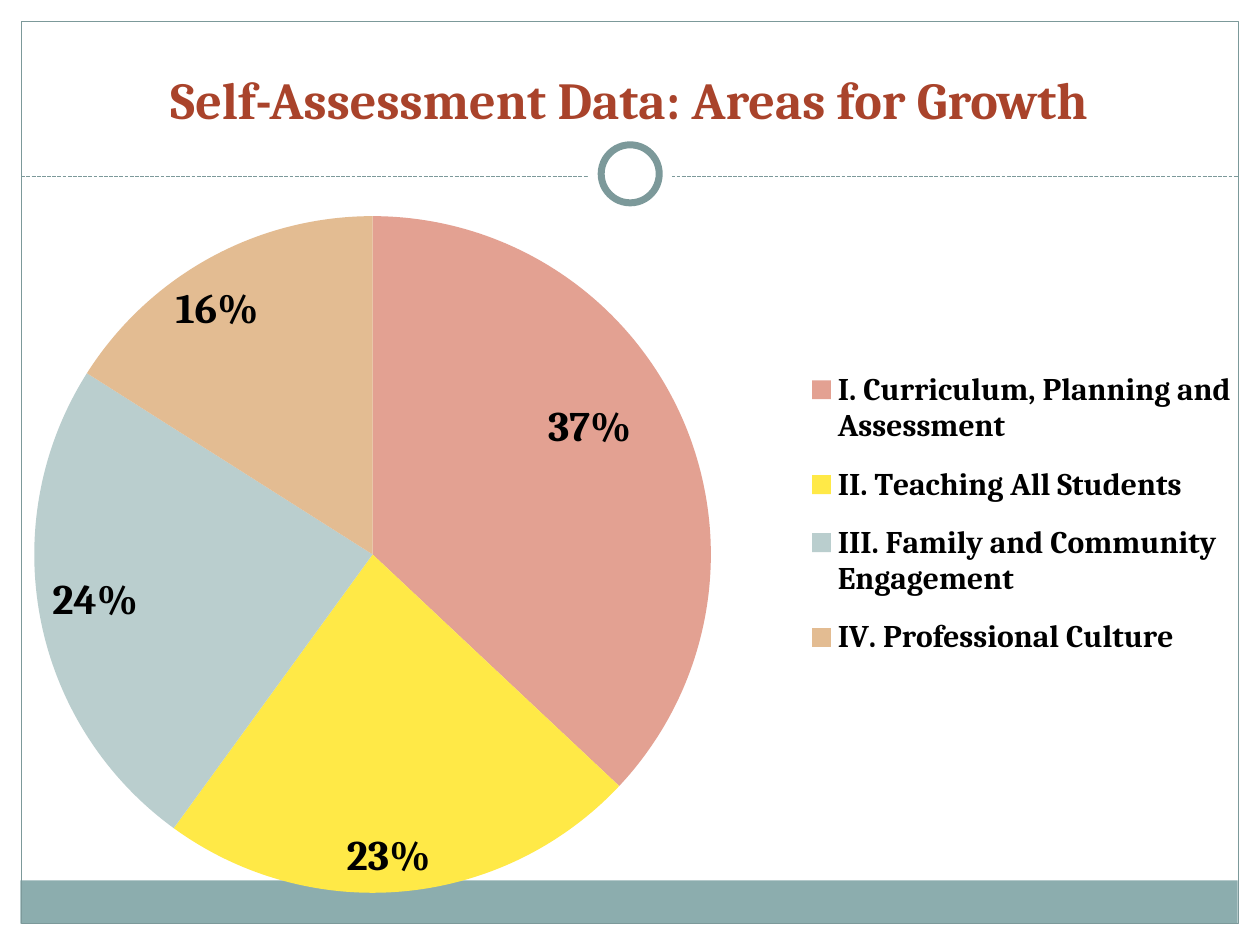
"""Build a slide with a pie chart of self-assessed areas for growth."""
import dataclasses

import pptx
import pptx.chart.data
import pptx.dml.color
import pptx.enum.chart
import pptx.enum.dml
import pptx.enum.shapes
import pptx.enum.text
import pptx.oxml
import pptx.oxml.ns
import pptx.util

Cm = pptx.util.Cm
Pt = pptx.util.Pt
SHAPES = pptx.enum.shapes.MSO_SHAPE
NAMESPACES = pptx.oxml.ns.nsdecls("a", "c")


@dataclasses.dataclass(frozen=True)
class Theme:
    font: str = "Cambria"
    title: str = "A9432B"
    text: str = "000000"
    paper: str = "FFFFFF"
    band: str = "8CADAE"
    line: str = "7C999A"
    title_size: float = 29.7
    legend_size: float = 18
    label_size: float = 24
    chart_size: float = 10


THEME = Theme()

# Each area: name, percentage, colour, label shift from the middle of its slice
AREAS = [
    ("I. Curriculum, Planning and Assessment", 37, "E3A192", (0.05, -0.08)),
    ("II. Teaching All Students", 23, "FFE947", (0, 0.18)),
    ("III. Family and Community Engagement", 24, "BACECE", (-0.09, 0.02)),
    ("IV. Professional Culture", 16, "E3BC92", (-0.06, -0.13)),
]


def rgb(value):
    return pptx.dml.color.RGBColor.from_string(value)


def style_font(font, size, color, bold=True):
    font.name = THEME.font
    font.size = Pt(size)
    font.bold = bold
    font.color.rgb = rgb(color)


def add_shape(page, kind, left, top, width, height, fill=None, line=None, weight=0.75):
    box = page.shapes.add_shape(kind, Cm(left), Cm(top), Cm(width), Cm(height))
    box.shadow.inherit = False
    if fill:
        box.fill.solid()
        box.fill.fore_color.rgb = rgb(fill)
    else:
        box.fill.background()
    if line:
        box.line.color.rgb = rgb(line)
        box.line.width = Pt(weight)
    else:
        box.line.fill.background()


def add_divider(page, left, right, top):
    divider = page.shapes.add_connector(
        pptx.enum.shapes.MSO_CONNECTOR.STRAIGHT, Cm(left), Cm(top), Cm(right), Cm(top))
    divider.line.color.rgb = rgb(THEME.line)
    divider.line.width = Pt(0.75)
    divider.line.dash_style = pptx.enum.dml.MSO_LINE.SQUARE_DOT
    divider._element.spPr.append(pptx.oxml.parse_xml(f"<a:effectLst {NAMESPACES}/>"))


def add_frame(page):
    add_shape(page, SHAPES.RECTANGLE, 0.41, 17.75, 24.54, 0.87, fill=THEME.band)
    add_shape(page, SHAPES.RECTANGLE, 0.43, 0.43, 24.54, 18.19, line=THEME.line)
    add_divider(page, 0.43, 24.97, 3.56)
    add_shape(page, SHAPES.OVAL, 11.85, 2.65, 1.7, 1.7, fill=THEME.paper)
    add_shape(page, SHAPES.OVAL, 12.12, 2.92, 1.17, 1.17,
              fill=THEME.paper, line=THEME.line, weight=4)


def set_title(page, text):
    title = page.shapes.title
    title.left, title.top, title.width, title.height = Cm(0.84), Cm(0.64), Cm(23.7), Cm(2.11)
    frame = title.text_frame
    frame.text = text
    frame.word_wrap = True
    frame.vertical_anchor = pptx.enum.text.MSO_ANCHOR.BOTTOM
    para = frame.paragraphs[0]
    para.alignment = pptx.enum.text.PP_ALIGN.CENTER
    style_font(para.runs[0].font, THEME.title_size, THEME.title)
    page.shapes._spTree.append(title._element)


def manual_layout(modes=(), **fractions):
    values = [(name, "edge") for name in modes] + list(fractions.items())
    parts = "".join(f'<c:{name} val="{value}"/>' for name, value in values)
    return pptx.oxml.parse_xml(
        f"<c:layout {NAMESPACES}><c:manualLayout>{parts}</c:manualLayout></c:layout>")


def replace_layout(parent, layout, before):
    for old in parent.findall(pptx.oxml.ns.qn("c:layout")):
        parent.remove(old)
    parent.find(pptx.oxml.ns.qn(before)).addprevious(layout)


def style_slice(series, index, color, shift):
    point = series.points[index]
    point.format.fill.solid()
    point.format.fill.fore_color.rgb = rgb(color)
    point.format.line.fill.background()
    label = point.data_label
    style_font(label.font, THEME.label_size, THEME.text)
    label.position = pptx.enum.chart.XL_LABEL_POSITION.CENTER
    element = series._element.xpath(f"c:dLbls/c:dLbl[c:idx/@val='{index}']")[0]
    element.find(pptx.oxml.ns.qn("c:showVal")).set("val", "0")
    element.find(pptx.oxml.ns.qn("c:showPercent")).set("val", "1")
    element.find(pptx.oxml.ns.qn("c:idx")).addnext(manual_layout(x=shift[0], y=shift[1]))


def add_pie(page):
    data = pptx.chart.data.CategoryChartData()
    data.categories = [area[0] for area in AREAS]
    data.add_series("Series 1", [area[1] for area in AREAS])
    chart = page.shapes.add_chart(
        pptx.enum.chart.XL_CHART_TYPE.PIE,
        Cm(0.41), Cm(3.61), Cm(24.92), Cm(14.99), data).chart
    chart.has_title = False
    style_font(chart.font, THEME.chart_size, THEME.text, bold=False)
    chart.element.find(pptx.oxml.ns.qn("c:chart")).addnext(pptx.oxml.parse_xml(
        f"<c:spPr {NAMESPACES}><a:noFill/><a:ln><a:noFill/></a:ln></c:spPr>"))

    plot = chart.plots[0]
    plot.vary_by_categories = True
    series = plot.series[0]
    series.data_labels.show_percentage = True
    series.data_labels.show_value = False
    for index, (_, _, color, shift) in enumerate(AREAS):
        style_slice(series, index, color, shift)

    chart.has_legend = True
    legend = chart.legend
    legend.position = pptx.enum.chart.XL_LEGEND_POSITION.RIGHT
    legend.include_in_layout = False
    style_font(legend.font, THEME.legend_size, THEME.text)
    modes = ("xMode", "yMode")
    replace_layout(legend._element, manual_layout(modes, x=0.62, y=0.23, w=0.38, h=0.44),
                   "c:overlay")
    area = chart.element.xpath("c:chart/c:plotArea")[0]
    replace_layout(area, manual_layout(("layoutTarget",) + modes, x=0.01, y=0.05, w=0.55, h=0.91),
                   "c:pieChart")
    area.xpath("c:layout/c:manualLayout/c:layoutTarget")[0].set("val", "inner")


def main():
    deck = pptx.Presentation()
    deck.slide_width, deck.slide_height = Cm(25.4), Cm(19.05)
    page = deck.slides.add_slide(deck.slide_layouts[5])
    add_frame(page)
    set_title(page, "Self-Assessment Data: Areas for Growth")
    add_pie(page)
    deck.save("out.pptx")


if __name__ == "__main__":
    main()
